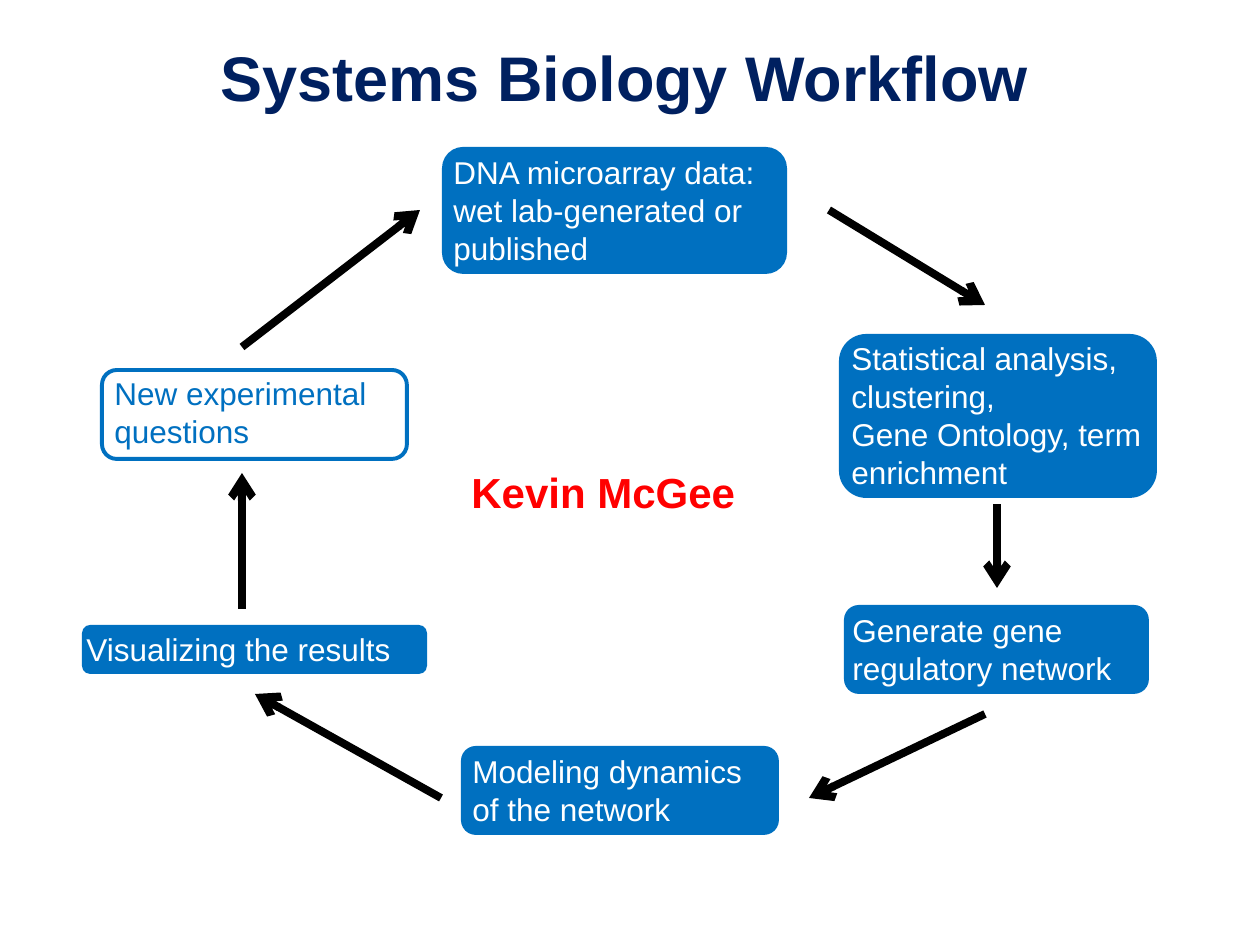
from pptx import Presentation
from pptx.dml.color import RGBColor
from pptx.enum.shapes import MSO_CONNECTOR as Link, MSO_SHAPE as Shape
from pptx.enum.text import MSO_AUTO_SIZE as Fit, PP_ALIGN as Align
from pptx.oxml.ns import qn
from pptx.util import Emu, Pt
from lxml.etree import SubElement

SCALE = 914400 / 126
BLUE = RGBColor(0x00, 0x70, 0xC0)
NAVY = RGBColor(0x00, 0x20, 0x60)
RED = RGBColor(0xFF, 0x00, 0x00)
WHITE = RGBColor(0xFF, 0xFF, 0xFF)
BLACK = RGBColor(0x00, 0x00, 0x00)

STEPS = [
    ((442, 147, 345, 127), (441, 147, 357, 127),
     "DNA microarray data:\nwet lab-generated or published", True),
    ((839, 334, 318, 164), (839, 333, 318, 165),
     "Statistical analysis,\nclustering,\nGene Ontology, term enrichment", True),
    ((844, 605, 305, 89), (840, 605, 325, 89),
     "Generate gene regulatory network", True),
    ((461, 746, 318, 89), (460, 746, 319, 89),
     "Modeling dynamics of the network", True),
    ((82, 625, 345, 49), (74, 624, 360, 50),
     "Visualizing the results", False),
]
ARROWS = [
    (985, 714, 809, 798),
    (242, 347, 420, 210),
    (829, 210, 985, 305),
    (441, 798, 255, 694),
    (242, 609, 242, 473),
    (997, 504, 997, 588),
]


def px(*nums):
    """Turn pixel lengths into EMU."""
    return [Emu(round(n * SCALE)) for n in nums]


def add_text(shapes, box, text, color, size=18, bold=False, wrap=True,
             align=Align.LEFT):
    """Add a text box in one style."""
    frame = shapes.add_textbox(*px(*box)).text_frame
    frame.text = text
    frame.word_wrap = wrap
    frame.auto_size = Fit.SHAPE_TO_FIT_TEXT
    for para in frame.paragraphs:
        para.alignment = align
        for run in para.runs:
            font = run.font
            font.name, font.size, font.bold = "Arial", Pt(size), bold
            font.color.rgb = color


def add_panel(shapes, box, filled=True):
    """Add a rounded panel, either filled or outlined in blue."""
    panel = shapes.add_shape(Shape.ROUNDED_RECTANGLE, *px(*box))
    panel.shadow.inherit = False
    if filled:
        panel.fill.solid()
        panel.fill.fore_color.rgb = BLUE
        panel.line.fill.background()
    else:
        panel.fill.background()
        panel.line.color.rgb = BLUE
        panel.line.width = Pt(2.25)


def add_step(shapes, box, area, text, wrap):
    """Group a filled panel with its label."""
    group = shapes.add_group_shape().shapes
    add_panel(group, box)
    add_text(group, area, text, WHITE, wrap=wrap)


def add_arrow(shapes, ends):
    """Add a thick black line with an open arrowhead at its end."""
    arrow = shapes.add_connector(Link.STRAIGHT, *px(*ends))
    arrow.line.color.rgb = BLACK
    arrow.line.width = Pt(4.5)
    props = arrow.line._get_or_add_ln()
    SubElement(props, qn("a:tailEnd"), type="arrow")
    SubElement(arrow._element.spPr, qn("a:effectLst"))


def main():
    """Build the workflow slide and save it."""
    deck = Presentation()
    deck.slide_width, deck.slide_height = px(1260, 945)
    shapes = deck.slides.add_slide(deck.slide_layouts[6]).shapes
    add_text(shapes, (136, 32, 977, 89), "Systems Biology Workflow", NAVY,
             size=36, bold=True, align=Align.CENTER)
    for step in STEPS:
        add_step(shapes, *step)
    add_panel(shapes, (102, 370, 305, 89), filled=False)
    add_text(shapes, (102, 368, 305, 89), "New experimental questions", BLUE)
    for ends in ARROWS:
        add_arrow(shapes, ends)
    add_text(shapes, (459, 460, 292, 63), "Kevin McGee", RED,
             size=24, bold=True, wrap=False)
    deck.save("out.pptx")


if __name__ == "__main__":
    main()
